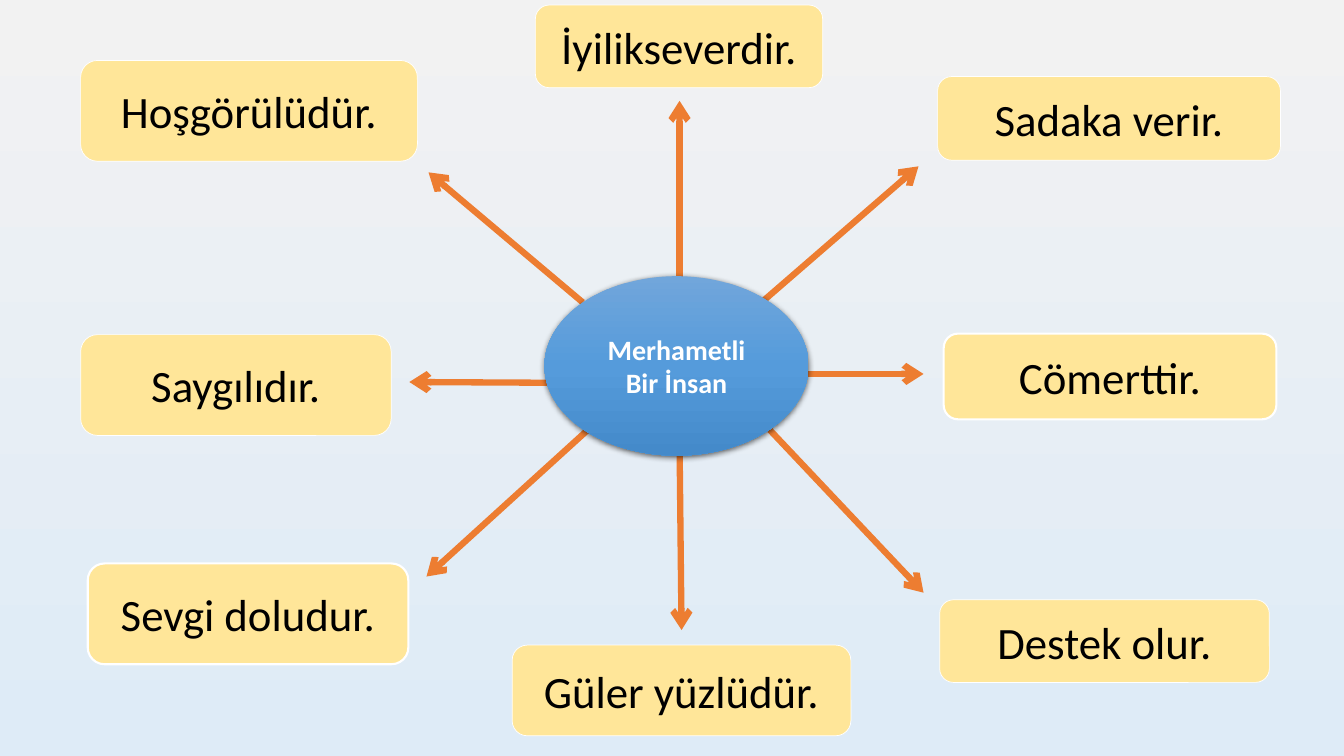
"""Builds a mind-map slide: a central oval with eight arrows leading to trait boxes."""
from copy import deepcopy
from dataclasses import dataclass

from lxml import etree
from pptx import Presentation
from pptx.dml.color import RGBColor
from pptx.enum import shapes, text
from pptx.oxml import ns, parse_xml
from pptx.util import Inches, Pt


@dataclass(frozen=True)
class Theme:
    font: str = "Calibri"
    trait_size: int = 32
    centre_size: int = 20
    box: str = "FFE699"
    white: str = "FFFFFF"
    black: str = "000000"
    arrow: str = "ED7D31"
    arrow_width: float = 4.5
    background: tuple[str, ...] = ("F2F2F2", "DEEBF7")
    oval: tuple[str, ...] = ("71A6DB", "559BDB", "448ACA")


@dataclass(frozen=True)
class Trait:
    label: str
    box: tuple[float, float, float, float]
    start: tuple[float, float]
    end: tuple[float, float]
    border: float = 0.5


THEME = Theme()
CENTRE = "Merhametli Bir İnsan"
OVAL = (5.4, 2.74, 2.62, 1.78)
TRAITS = (
    Trait("Hoşgörülüdür.", (0.8, 0.6, 3.34, 1), (5.78, 3), (4.25, 1.71)),
    Trait("İyilikseverdir.", (5.31, 0.05, 2.85, 0.82), (6.74, 3), (6.74, 1)),
    Trait("Saygılıdır.", (0.8, 3.32, 3.08, 1), (5.99, 3.8), (4.06, 3.79)),
    Trait("Sevgi doludur.", (0.87, 5.59, 3.18, 1), (5.88, 4.22), (4.23, 5.72), 1.5),
    Trait("Sadaka verir.", (9.3, 0.76, 3.4, 0.83), (7.38, 3.15), (9.11, 1.65)),
    Trait("Cömerttir.", (9.36, 3.31, 3.3, 0.85), (7.83, 3.71), (9.16, 3.71), 1.5),
    Trait("Destek olur.", (9.32, 5.95, 3.27, 0.82), (7.63, 4.26), (9.16, 5.88)),
    Trait("Güler yüzlüdür.", (5.08, 6.4, 3.36, 0.9), (6.74, 4.39), (6.76, 6.25)),
)


def rgb(colour: str) -> RGBColor:
    return RGBColor.from_string(colour)


def set_gradient(fill, element, colours: tuple[str, ...]) -> None:
    fill.gradient()
    fill.gradient_angle = 270
    stop_list = next(element.iter(ns.qn("a:gsLst")))
    while len(stop_list) < len(colours):
        stop_list.append(deepcopy(stop_list[-1]))
    for i, (stop, colour) in enumerate(zip(fill.gradient_stops, colours)):
        stop.position = i / (len(colours) - 1)
        stop.color.rgb = rgb(colour)


def add_text(sp, label: str, size: int, colour: str, bold: bool = False) -> None:
    tf = sp.text_frame
    tf.word_wrap = True
    tf.vertical_anchor = text.MSO_ANCHOR.MIDDLE
    p = tf.paragraphs[0]
    p.alignment = text.PP_ALIGN.CENTER
    r = p.add_run()
    r.text = label
    r.font.name = THEME.font
    r.font.size = Pt(size)
    r.font.bold = bold
    r.font.color.rgb = rgb(colour)


def add_box(s, trait: Trait) -> None:
    sp = s.shapes.add_shape(shapes.MSO_SHAPE.ROUNDED_RECTANGLE, *map(Inches, trait.box))
    sp.shadow.inherit = False
    sp.fill.solid()
    sp.fill.fore_color.rgb = rgb(THEME.box)
    sp.line.color.rgb = rgb(THEME.white)
    sp.line.width = Pt(trait.border)
    add_text(sp, trait.label, THEME.trait_size, THEME.black)


def add_arrow(s, trait: Trait) -> None:
    cx = s.shapes.add_connector(
        shapes.MSO_CONNECTOR.STRAIGHT, *map(Inches, trait.start + trait.end)
    )
    cx.line.color.rgb = rgb(THEME.arrow)
    cx.line.width = Pt(THEME.arrow_width)
    sp_pr = cx._element.spPr
    etree.SubElement(sp_pr.find(ns.qn("a:ln")), ns.qn("a:tailEnd"), type="arrow")
    etree.SubElement(sp_pr, ns.qn("a:effectLst"))


def add_oval(s) -> None:
    sp = s.shapes.add_shape(shapes.MSO_SHAPE.OVAL, *map(Inches, OVAL))
    set_gradient(sp.fill, sp._element, THEME.oval)
    sp.line.fill.background()
    sp._element.spPr.append(parse_xml(
        f'<a:effectLst {ns.nsdecls("a")}>'
        f'<a:outerShdw blurRad="{Pt(4.5)}" dist="{Pt(1.5)}" dir="5400000" '
        f'algn="ctr" rotWithShape="0"><a:srgbClr val="{THEME.black}">'
        '<a:alpha val="63000"/></a:srgbClr></a:outerShdw></a:effectLst>'
    ))
    add_text(sp, CENTRE, THEME.centre_size, THEME.white, bold=True)


def main() -> None:
    prs = Presentation()
    prs.slide_width, prs.slide_height = Inches(13.33), Inches(7.5)
    s = prs.slides.add_slide(prs.slide_layouts[6])
    set_gradient(s.background.fill, s._element, THEME.background)
    for trait in TRAITS:
        add_box(s, trait)
    for trait in TRAITS:
        add_arrow(s, trait)
    add_oval(s)
    prs.save("out.pptx")


if __name__ == "__main__":
    main()
